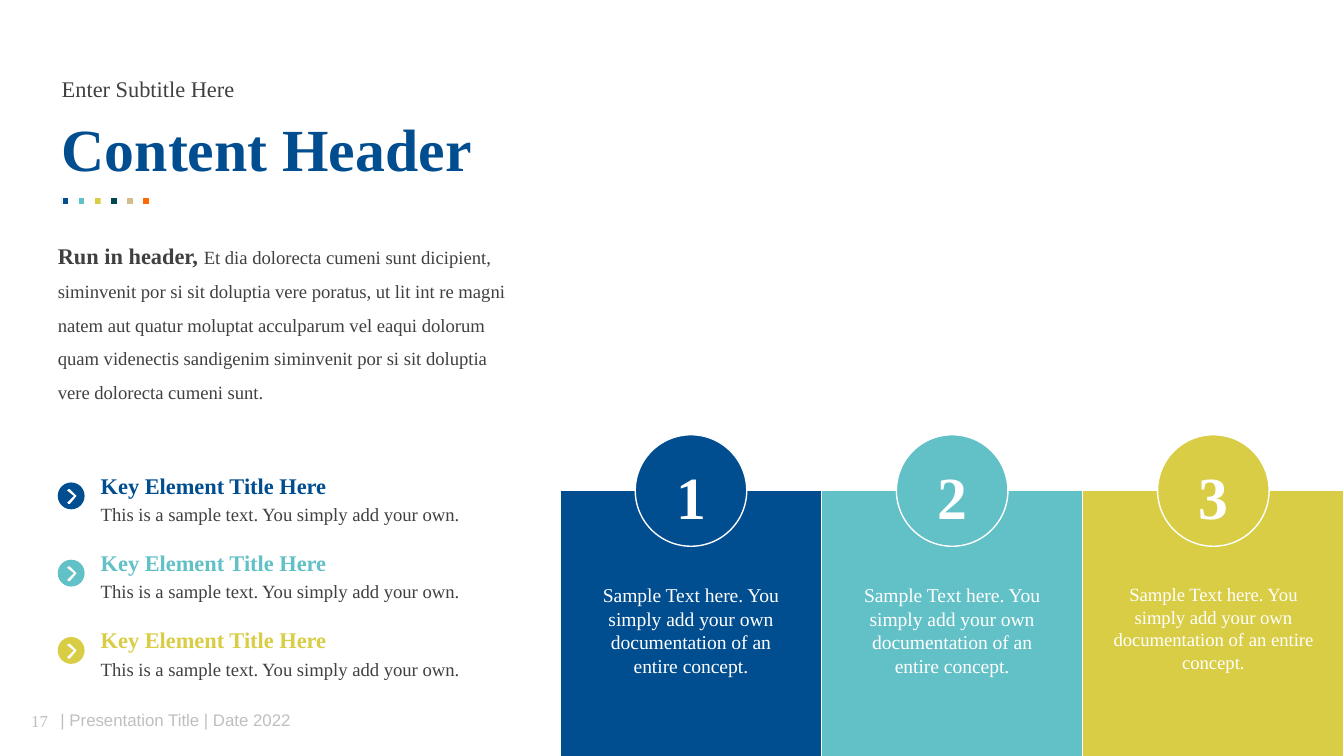
from copy import deepcopy

from pptx import Presentation
from pptx.dml.color import RGBColor
from pptx.enum import shapes, text
from pptx.util import Inches, Pt

BLUE = RGBColor(0x00, 0x4D, 0x8F)
TEAL = RGBColor(0x62, 0xC0, 0xC7)
LIME = RGBColor(0xD9, 0xCD, 0x45)
PINE = RGBColor(0x00, 0x48, 0x51)
SAND = RGBColor(0xD4, 0xBD, 0x8D)
ORANGE = RGBColor(0xFF, 0x69, 0x00)
WHITE = RGBColor(0xFF, 0xFF, 0xFF)
DARK = RGBColor(0x40, 0x40, 0x40)
GREY = RGBColor(0xBF, 0xBF, 0xBF)

SERIF = "Times New Roman"
ACCENTS = (BLUE, TEAL, LIME)
CHEVRON = [(7, 6), (8, 5), (9, 5), (14, 10), (9, 16), (8, 16), (7, 15), (12, 10)]
BODY = (
    "Et dia dolorecta cumeni sunt dicipient, siminvenit por si sit doluptia vere "
    "poratus, ut lit int re magni natem aut quatur moluptat acculparum vel eaqui "
    "dolorum quam videnectis sandigenim siminvenit por si sit doluptia vere "
    "dolorecta cumeni sunt."
)
SAMPLE = "Sample Text here. You simply add your own documentation of an entire concept."


def write(box, *spans, font=SERIF, align=text.PP_ALIGN.LEFT,
          anchor=text.MSO_ANCHOR.MIDDLE, inset=(0, 0), spacing=None, after=None):
    frame = box.text_frame
    frame.word_wrap = True
    frame.auto_size = text.MSO_AUTO_SIZE.NONE
    frame.vertical_anchor = anchor
    frame.margin_left = frame.margin_right = Inches(inset[0])
    frame.margin_top = frame.margin_bottom = Inches(inset[1])
    para = frame.paragraphs[0]
    para.alignment = align
    para.line_spacing = spacing
    para.space_after = after
    for words, size, color, bold in spans:
        span = para.add_run()
        span.text = words.rstrip("\n")
        span.font.name = font
        span.font.size = Pt(size)
        span.font.bold = bold
        span.font.color.rgb = color
        if words.endswith("\n"):
            para.add_line_break()
            para._p[-1].append(deepcopy(span._r.rPr))


def add_text(page, left, top, width, height, *spans, **layout):
    box = page.shapes.add_textbox(Inches(left), Inches(top), Inches(width), Inches(height))
    write(box, *spans, **layout)


def paint(shape, fill, line=None):
    shape.shadow.inherit = False
    shape.fill.solid()
    shape.fill.fore_color.rgb = fill
    if line is None:
        shape.line.fill.background()
    else:
        shape.line.color.rgb = WHITE
        shape.line.width = Pt(line)


def add_block(parent, kind, left, top, width, height, fill, line=None):
    shape = parent.shapes.add_shape(
        kind, Inches(left), Inches(top), Inches(width), Inches(height))
    paint(shape, fill, line)


def add_footer(page, left, top):
    add_text(page, left, top, 0.43, 0.3, ("17", 9, GREY, False),
             align=text.PP_ALIGN.CENTER, inset=(0.1, 0.05))
    add_text(page, left + 0.37, top + 0.07, 2, 0.15,
             ("| Presentation Title | Date 2022", 9, GREY, False), font="Arial")


def add_header(page, left, top, width):
    add_text(page, left, top, width, 0.2, ("Enter Subtitle Here", 12, DARK, False))
    title = page.shapes.title
    title.left, title.top = Inches(left), Inches(top + 0.27)
    title.width, title.height = Inches(width), Inches(0.54)
    write(title, ("Content Header", 32, BLUE, True), spacing=1.0)
    squares = page.shapes.add_group_shape()
    for index, color in enumerate((*ACCENTS, PINE, SAND, ORANGE)):
        add_block(squares, shapes.MSO_SHAPE.RECTANGLE,
                  left + 0.12 * index, top + 0.91, 0.05, 0.05, color, 0.25)


def add_key_element(page, left, top, width, color):
    badge = page.shapes.add_group_shape()
    add_block(badge, shapes.MSO_SHAPE.OVAL, left, top + 0.12, 0.2, 0.2, color)
    builder = badge.shapes.build_freeform(*CHEVRON[0], scale=Inches(0.01))
    builder.add_line_segments(CHEVRON[1:], close=True)
    paint(builder.convert_to_shape(Inches(left), Inches(top + 0.12)), WHITE)
    add_text(page, left + 0.32, top, width - 0.32, 0.44,
             ("Key Element Title Here\n", 12, color, True),
             ("This is a sample text. You simply add your own.", 10, DARK, False),
             spacing=1.2, after=Pt(10))


def add_panel(page, left, top, width, height, number, color, size, margin):
    circle = 0.83
    add_block(page, shapes.MSO_SHAPE.RECTANGLE, left, top, width, height, color, 0)
    add_block(page, shapes.MSO_SHAPE.OVAL, left + (width - circle) / 2,
              top - circle / 2, circle, circle, color, 0.75)
    add_text(page, left + margin, top + 0.64, width - 2 * margin, 0.81,
             (SAMPLE, size, WHITE, False), align=text.PP_ALIGN.CENTER,
             anchor=text.MSO_ANCHOR.TOP, inset=(0.1, 0.05))
    add_text(page, left + width / 2 - 0.11, top - 0.23, 0.26, 0.54,
             (str(number), 32, WHITE, True))


def main():
    deck = Presentation()
    deck.slide_width = Inches(10)
    deck.slide_height = deck.slide_width * 9 // 16
    page = deck.slides.add_slide(deck.slide_layouts[5])

    add_footer(page, 0.08, 5.21)
    add_header(page, 0.46, 0.56, 3.36)
    add_text(page, 0.43, 1.7, 3.39, 1.29,
             ("Run in header, ", 12, DARK, True), (BODY, 10, DARK, False),
             anchor=text.MSO_ANCHOR.TOP, spacing=1.5)
    for index, color in enumerate(ACCENTS):
        add_key_element(page, 0.43, 3.47 + 1.15 / 2 * index, 3.39, color)

    pitch = (10 - 4.17) / 3
    for index, (color, size, margin) in enumerate(
            zip(ACCENTS, (10.5, 10.5, 10), (0.1, 0.13, 0.1))):
        add_panel(page, 4.17 + pitch * index, 3.65, pitch, 1.98,
                  index + 1, color, size, margin)

    deck.save("out.pptx")


if __name__ == "__main__":
    main()
